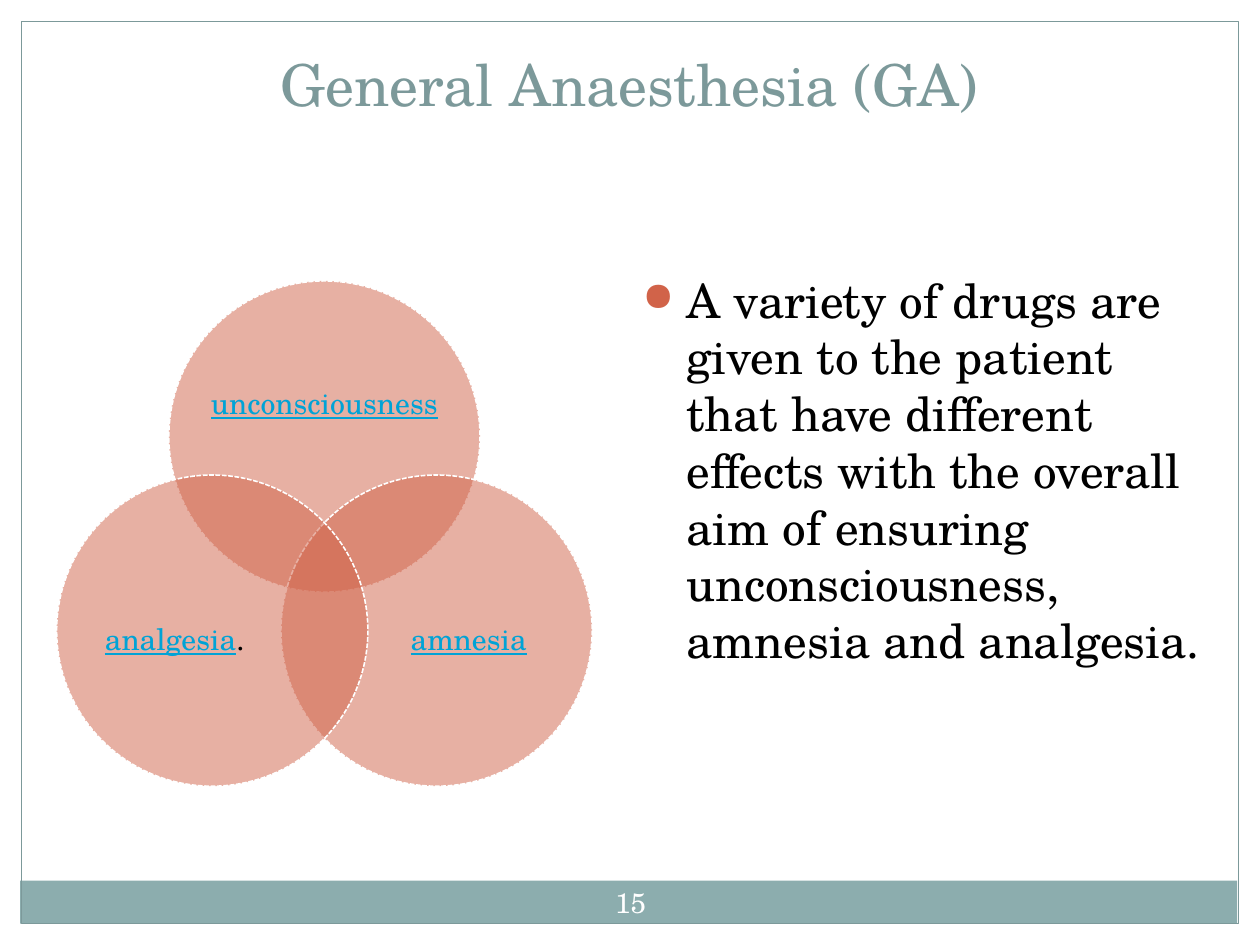
from typing import NamedTuple

import pptx
import pptx.dml.color
import pptx.enum.dml
import pptx.enum.shapes
import pptx.enum.text
import pptx.oxml
import pptx.oxml.ns
import pptx.util
from pptx.dml.color import RGBColor
from pptx.enum.shapes import MSO_SHAPE
from pptx.enum.text import MSO_ANCHOR, PP_ALIGN

EMU_PER_PX = 9144  # 100 px to the inch
FONT = "TeX Gyre Schola"
WHITE = RGBColor(0xFF, 0xFF, 0xFF)
BLACK = RGBColor(0x00, 0x00, 0x00)
TEAL = RGBColor(0x7C, 0x99, 0x9A)
BAND = RGBColor(0x8C, 0xAD, 0xAE)
RUST = RGBColor(0xD1, 0x63, 0x49)
LINK_BLUE = RGBColor(0x00, 0xA3, 0xD6)
DIAMETER = 247


class Box(NamedTuple):
    left: int
    top: int
    width: int
    height: int


class Effect(NamedTuple):
    name: str
    suffix: str
    left: int
    top: int
    label: Box


EFFECTS = [
    Effect("unconsciousness", "", 134, 223, Box(167, 266, 181, 111)),
    Effect("amnesia", "", 223, 377, Box(298, 441, 148, 136)),
    Effect("analgesia", ". ", 45, 377, Box(68, 441, 148, 136)),
]


def px(n: int) -> pptx.util.Emu:
    return pptx.util.Emu(n * EMU_PER_PX)


def emu(box: Box) -> list:
    return [px(n) for n in box]


def add_run(p, text: str, size: int, color: RGBColor, underline: bool = False) -> None:
    r = p.add_run()
    r.text = text
    r.font.name = FONT
    r.font.size = pptx.util.Pt(size)
    r.font.color.rgb = color
    r.font.underline = underline


def add_preset(slide, kind: MSO_SHAPE, box: Box):
    sp = slide.shapes.add_shape(kind, *emu(box))
    sp.shadow.inherit = False
    return sp


def add_text_box(slide, box: Box, inset: int, anchor: MSO_ANCHOR, align: PP_ALIGN):
    """Add a wrapping text box and return its first paragraph."""
    tf = slide.shapes.add_textbox(*emu(box)).text_frame
    tf.word_wrap = True
    tf.vertical_anchor = anchor
    tf.margin_left = tf.margin_right = px(inset)
    tf.margin_top = tf.margin_bottom = px(min(inset, 5))
    p = tf.paragraphs[0]
    p.alignment = align
    return p


def set_alpha(sp, percent: int) -> None:
    color = sp.fill._xPr.find(pptx.oxml.ns.qn("a:solidFill"))[0]
    color.append(pptx.oxml.parse_xml(
        f'<a:alpha {pptx.oxml.ns.nsdecls("a")} val="{percent * 1000}"/>'))


def set_bullet(p, char: str, color: RGBColor, percent: int, indent: int) -> None:
    pPr = p._p.get_or_add_pPr()
    pPr.set("marL", str(px(indent)))
    pPr.set("indent", str(px(-indent)))
    ns = pptx.oxml.ns.nsdecls("a")
    for xml in (
        f'<a:buClr {ns}><a:srgbClr val="{color}"/></a:buClr>',
        f'<a:buSzPct {ns} val="{percent * 1000}"/>',
        f'<a:buChar {ns} char="{char}"/>',
    ):
        pPr.append(pptx.oxml.parse_xml(xml))


def add_frame(slide) -> None:
    band = add_preset(slide, MSO_SHAPE.RECTANGLE, Box(16, 699, 966, 34))
    band.fill.solid()
    band.fill.fore_color.rgb = BAND
    band.line.fill.background()
    border = add_preset(slide, MSO_SHAPE.RECTANGLE, Box(17, 17, 966, 716))
    border.fill.background()
    border.line.color.rgb = TEAL
    border.line.width = pptx.util.Pt(0.75)
    p = add_text_box(slide, Box(467, 692, 67, 48), 5, MSO_ANCHOR.MIDDLE, PP_ALIGN.CENTER)
    add_run(p, "15", 16, WHITE)


def set_title(slide, text: str) -> None:
    title = slide.shapes.title
    title.left, title.top, title.width, title.height = emu(Box(33, 25, 933, 83))
    tf = title.text_frame
    tf.vertical_anchor = MSO_ANCHOR.MIDDLE
    p = tf.paragraphs[0]
    p.alignment = PP_ALIGN.CENTER
    add_run(p, text, 33, TEAL)


def add_effect(slide, effect: Effect) -> None:
    circle = add_preset(slide, MSO_SHAPE.OVAL,
                        Box(effect.left, effect.top, DIAMETER, DIAMETER))
    circle.fill.solid()
    circle.fill.fore_color.rgb = RUST
    set_alpha(circle, 50)
    circle.line.color.rgb = WHITE
    circle.line.width = pptx.util.Pt(0.9)
    circle.line.dash_style = pptx.enum.dml.MSO_LINE.SQUARE_DOT
    p = add_text_box(slide, effect.label, 0, MSO_ANCHOR.MIDDLE, PP_ALIGN.CENTER)
    p.line_spacing = 0.9
    p.space_after = pptx.util.Pt(6)
    add_run(p, effect.name, 17, LINK_BLUE, underline=True)
    if effect.suffix:
        add_run(p, effect.suffix, 17, BLACK)


def add_body(slide, text: str) -> None:
    p = add_text_box(slide, Box(500, 210, 473, 386), 10, MSO_ANCHOR.TOP, PP_ALIGN.LEFT)
    p.space_before = pptx.util.Pt(5.4)
    set_bullet(p, "●", RUST, 85, 35)
    add_run(p, text, 27, BLACK)


def main() -> None:
    prs = pptx.Presentation()
    prs.slide_width, prs.slide_height = px(1000), px(750)
    slide = prs.slides.add_slide(prs.slide_layouts.get_by_name("Title Only"))
    add_frame(slide)
    set_title(slide, "General Anaesthesia (GA)")
    for effect in EFFECTS:
        add_effect(slide, effect)
    add_body(slide, "A variety of drugs are given to the patient that have different "
                    "effects with the overall aim of ensuring unconsciousness, "
                    "amnesia and analgesia.")
    prs.save("out.pptx")


if __name__ == "__main__":
    main()
